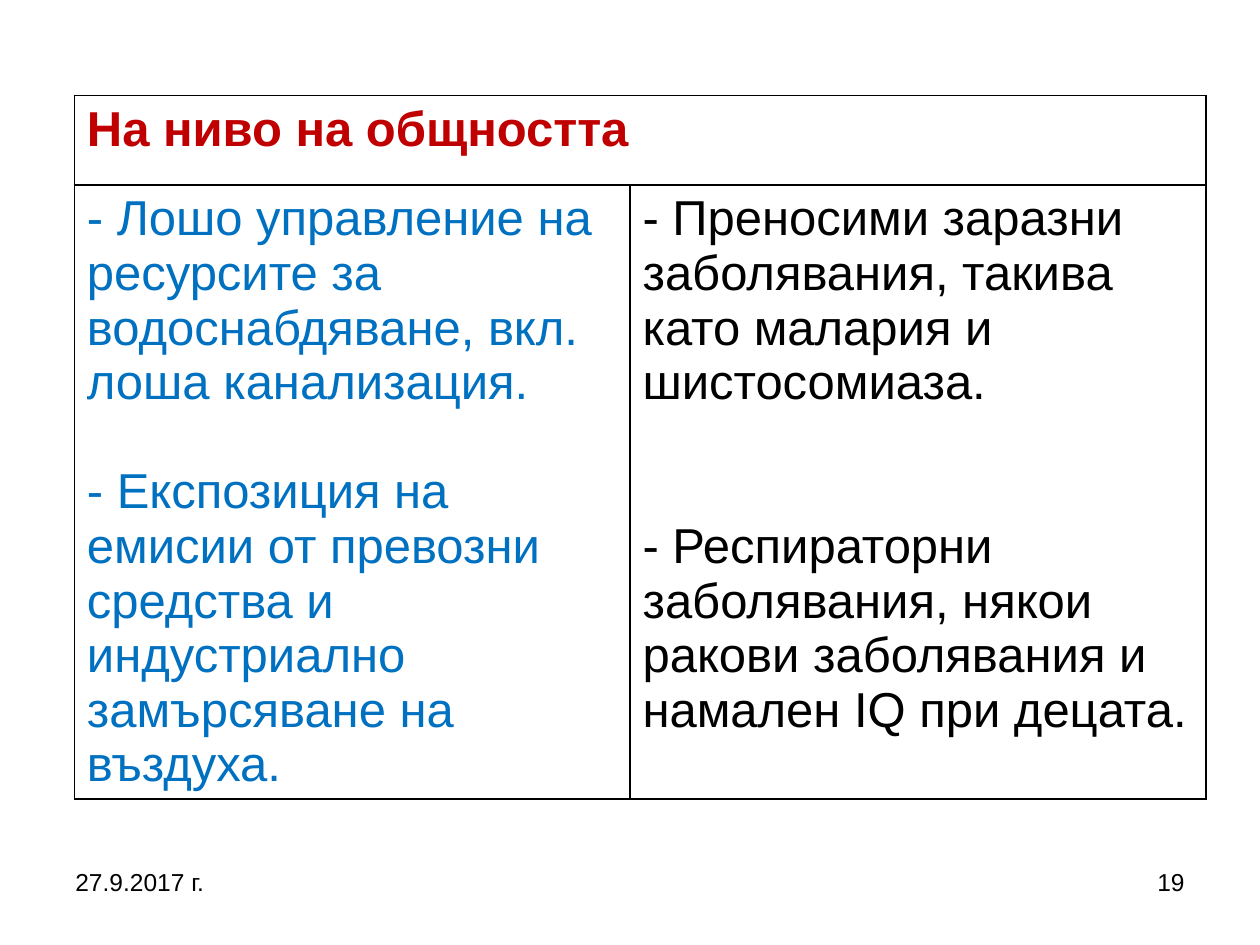
from lxml import etree
from pptx import Presentation
from pptx import util as u
from pptx.dml.color import RGBColor
from pptx.enum import text
from pptx.oxml.ns import qn

RED = RGBColor(0xC0, 0x00, 0x00)
BLUE = RGBColor(0x00, 0x70, 0xC0)
BLACK = RGBColor(0x00, 0x00, 0x00)
WHITE = RGBColor(0xFF, 0xFF, 0xFF)

FONT = "Arial"
LINE = 31.2  # pitch of the table text, in points

HEADING = "На ниво на общността"
CAUSES = [
    "- Лошо управление на ресурсите за водоснабдяване, вкл. лоша канализация.",
    "- Експозиция на емисии от превозни средства и индустриално замърсяване на въздуха.",
]
EFFECTS = [
    "- Преносими заразни заболявания, такива като малария и шистосомиаза.",
    "- Респираторни заболявания, някои ракови заболявания и намален IQ при децата.",
]


def write(tf, paragraphs, size=28, color=BLACK, bold=False,
          align=text.PP_ALIGN.LEFT, gap=0, pitch=None):
    """Fill a text frame, with gap points between its paragraphs."""
    tf.word_wrap = True
    for i, words in enumerate(paragraphs):
        p = tf.paragraphs[0] if i == 0 else tf.add_paragraph()
        p.alignment = align
        if pitch:
            p.line_spacing = u.Pt(pitch)
        if i:
            p.space_before = u.Pt(gap)
        r = p.add_run()
        r.text = words
        r.font.name, r.font.size, r.font.bold = FONT, u.Pt(size), bold
        r.font.color.rgb = color


def add_borders(cell, width=1):
    """Draw a thin line on all four sides of a cell."""
    tcPr = cell._tc.get_or_add_tcPr()
    for side in ("lnL", "lnR", "lnT", "lnB"):
        ln = etree.SubElement(tcPr, qn(f"a:{side}"), w=str(u.Pt(width)))
        fill = etree.SubElement(ln, qn("a:solidFill"))
        etree.SubElement(fill, qn("a:srgbClr"), val=str(BLACK))


def add_community_table(s):
    cols, rows = (4.41, 4.57), (0.71, 4.87)
    frame = s.shapes.add_table(len(rows), len(cols), u.Inches(0.59), u.Inches(0.76),
                               u.Inches(sum(cols)), u.Inches(sum(rows)))
    table = frame.table
    table.first_row = table.horz_banding = False
    for col, width in zip(table.columns, cols):
        col.width = u.Inches(width)
    for row, height in zip(table.rows, rows):
        row.height = u.Inches(height)
    for cell in table.iter_cells():
        add_borders(cell)
        cell.fill.solid()
        cell.fill.fore_color.rgb = WHITE

    # Heading across both columns, then causes and effects side by side
    table.cell(0, 0).merge(table.cell(0, 1))
    write(table.cell(0, 0).text_frame, [HEADING], color=RED, bold=True, pitch=LINE)
    write(table.cell(1, 0).text_frame, CAUSES, color=BLUE, gap=LINE, pitch=LINE)
    write(table.cell(1, 1).text_frame, EFFECTS, gap=2 * LINE, pitch=LINE)


def add_footer(s, left, words, align):
    sp = s.shapes.add_textbox(u.Inches(left), u.Inches(6.83), u.Inches(2.33), u.Inches(0.52))
    write(sp.text_frame, [words], size=14, align=align)


def main():
    prs = Presentation()
    prs.slide_width, prs.slide_height = u.Inches(10), u.Inches(7.5)
    s = prs.slides.add_slide(prs.slide_layouts[6])
    add_community_table(s)

    # Date and slide number
    add_footer(s, 0.5, "27.9.2017 г.", text.PP_ALIGN.LEFT)
    add_footer(s, 7.17, "19", text.PP_ALIGN.RIGHT)
    prs.save("out.pptx")


if __name__ == "__main__":
    main()
